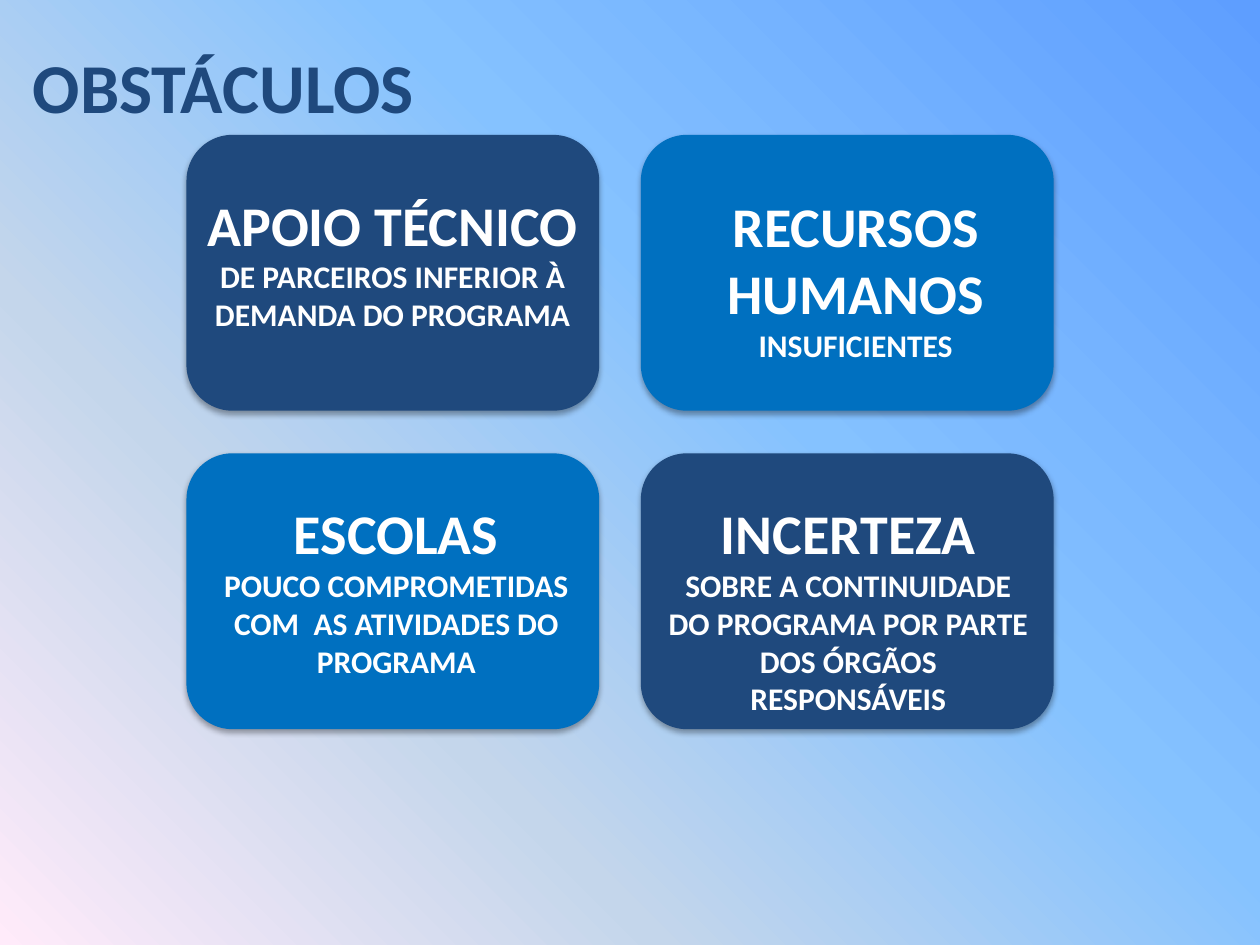
import dataclasses

import pptx
import pptx.dml.color
import pptx.enum.shapes
import pptx.enum.text
import pptx.oxml
import pptx.oxml.ns
import pptx.util
from pptx.util import Cm

qn = pptx.oxml.ns.qn


@dataclasses.dataclass(frozen=True)
class Theme:
    font: str = "Calibri"
    navy: str = "1F497D"
    blue: str = "0070C0"
    white: str = "FFFFFF"
    title_size: int = 40
    heading_size: int = 32
    detail_size: int = 18
    backdrop: tuple = ((0, "5E9EFF"), (40, "85C2FF"), (70, "C4D6EB"), (100, "FFEBFA"))


THEME = Theme()

# Heading, detail lines, fill, text area (left, top, width, height in cm within the card)
CARDS = [
    ("APOIO TÉCNICO", ["DE PARCEIROS INFERIOR À DEMANDA DO PROGRAMA"],
     THEME.navy, (-0.05, 0.99, 8.41, 3.15)),
    ("RECURSOS HUMANOS", ["INSUFICIENTES"],
     THEME.blue, (1.14, 1.02, 6.38, 3.76)),
    ("ESCOLAS", ["POUCO COMPROMETIDAS", "COM  AS ATIVIDADES DO PROGRAMA"],
     THEME.blue, (0.33, 0.79, 7.8, 4.7)),
    ("INCERTEZA", ["SOBRE A CONTINUIDADE DO PROGRAMA POR PARTE DOS ÓRGÃOS RESPONSÁVEIS"],
     THEME.navy, (0.18, 0.79, 8, 5.46)),
]

SHADOW = (
    f'<a:effectLst {pptx.oxml.ns.nsdecls("a")}>'
    '<a:outerShdw blurRad="40000" dist="23000" dir="5400000" rotWithShape="0">'
    '<a:srgbClr val="000000"><a:alpha val="35000"/></a:srgbClr>'
    '</a:outerShdw></a:effectLst>'
)


def rgb(value):
    return pptx.dml.color.RGBColor.from_string(value)


def style_para(para, size, color, align):
    para.alignment = align
    for span in para.runs:
        span.font.name = THEME.font
        span.font.size = pptx.util.Pt(size)
        span.font.bold = True
        span.font.color.rgb = rgb(color)


def paint_background(page):
    fill = page.background.fill
    fill.gradient()
    fill.gradient_angle = 225
    stops = page.element.find(".//" + qn("a:gsLst"))
    for stop in list(stops):
        stops.remove(stop)
    for position, color in THEME.backdrop:
        stops.append(pptx.oxml.parse_xml(
            f'<a:gs {pptx.oxml.ns.nsdecls("a")} pos="{position * 1000}">'
            f'<a:srgbClr val="{color}"/></a:gs>'))


def place_title(page, text, left, top, width, height):
    title = page.shapes.title
    title.left, title.top, title.width, title.height = left, top, width, height
    frame = title.text_frame
    frame.text = text
    frame.vertical_anchor = pptx.enum.text.MSO_ANCHOR.TOP
    frame.auto_size = pptx.enum.text.MSO_AUTO_SIZE.SHAPE_TO_FIT_TEXT
    style_para(frame.paragraphs[0], THEME.title_size, THEME.navy,
               pptx.enum.text.PP_ALIGN.LEFT)


def place_card(page, card, left, top, width, height):
    heading, details, color, area = card

    # Rounded panel with a soft shadow below
    panel = page.shapes.add_shape(
        pptx.enum.shapes.MSO_SHAPE.ROUNDED_RECTANGLE, left, top, width, height)
    panel.fill.solid()
    panel.fill.fore_color.rgb = rgb(color)
    panel.line.fill.background()
    panel.element.spPr.append(pptx.oxml.parse_xml(SHADOW))

    # Heading and details on the panel
    inset_x, inset_y, text_width, text_height = map(Cm, area)
    box = page.shapes.add_textbox(left + inset_x, top + inset_y, text_width, text_height)
    frame = box.text_frame
    frame.word_wrap = True
    frame.auto_size = pptx.enum.text.MSO_AUTO_SIZE.SHAPE_TO_FIT_TEXT
    frame.text = "\n".join([heading, *details])
    for index, para in enumerate(frame.paragraphs):
        size = THEME.detail_size if index else THEME.heading_size
        style_para(para, size, THEME.white, pptx.enum.text.PP_ALIGN.CENTER)


def place_card_grid(page, cards, left, top, width, height, gap_x, gap_y, columns=2):
    rows = len(cards) // columns
    card_width = (width - (columns - 1) * gap_x) // columns
    card_height = (height - (rows - 1) * gap_y) // rows
    for index, card in enumerate(cards):
        row, column = divmod(index, columns)
        place_card(page, card,
                   left + column * (card_width + gap_x),
                   top + row * (card_height + gap_y),
                   card_width, card_height)


def main():
    deck = pptx.Presentation()
    deck.slide_width, deck.slide_height = Cm(25.4), Cm(19.05)
    page = deck.slides.add_slide(deck.slide_layouts.get_by_name("Title Only"))
    paint_background(page)
    place_title(page, "OBSTÁCULOS", Cm(0.41), Cm(0.74), Cm(24.41), Cm(1.96))
    place_card_grid(page, CARDS, Cm(3.76), Cm(2.72), Cm(17.48), Cm(11.98),
                    gap_x=Cm(0.84), gap_y=Cm(0.86))
    deck.save("out.pptx")


if __name__ == "__main__":
    main()
